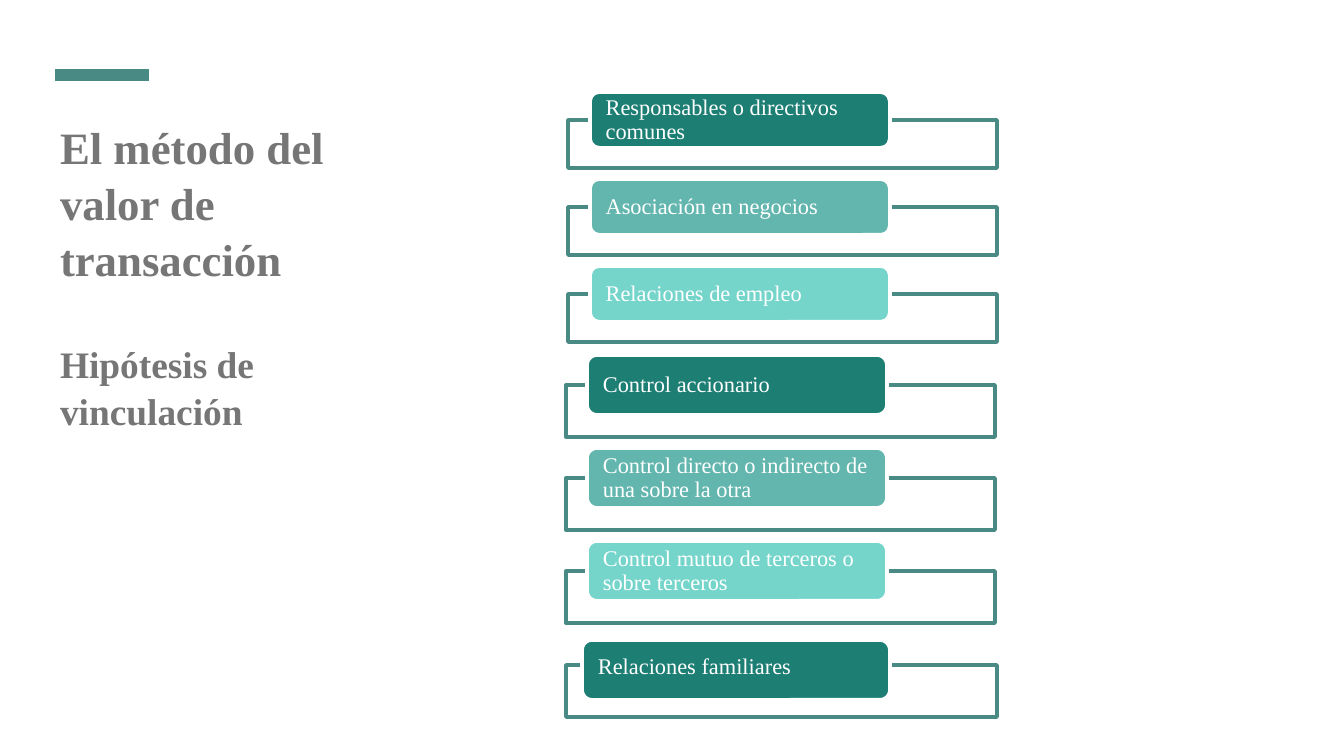
"""Build a slide listing the links between parties under the transaction value method."""
import pptx
import pptx.util
import pptx.dml.color
import pptx.enum.shapes
import pptx.enum.text
import pptx.oxml.ns
import lxml.etree

SCALE = 914400 / 134.4
FONT = "Times New Roman"
HUES = {"dark": "1D7E74", "mid": "62B6AE", "light": "75D5CB",
        "edge": "4A8A84", "grey": "777676", "white": "FFFFFF"}
TITLE = [("El método del valor de transacción", 24, 0),
         ("Hipótesis de vinculación", 20, 29)]
GROUPS = [
    {"frame": (568, 429, 48), "pill": (590, 300, 56), "top": 92,
     "step": 87, "drop": 28, "foot": 0,
     "items": [("Responsables o directivos comunes", "dark"),
               ("Asociación en negocios", "mid"),
               ("Relaciones de empleo", "light")]},
    {"frame": (566, 429, 52), "pill": (587, 300, 60), "top": 355,
     "step": 93, "drop": 30, "foot": 0,
     "items": [("Control accionario", "dark"),
               ("Control directo o indirecto de una sobre la otra", "mid"),
               ("Control mutuo de terceros o sobre terceros", "light")]},
    {"frame": (566, 431, 52), "pill": (582, 308, 60), "top": 640,
     "step": 0, "drop": 25, "foot": 5,
     "items": [("Relaciones familiares", "dark")]},
]
KIND = pptx.enum.shapes.MSO_SHAPE
ALIGN = pptx.enum.text.PP_ALIGN
ANCHOR = pptx.enum.text.MSO_ANCHOR


def px(num):
    return pptx.util.Emu(round(num * SCALE))


def rgb(name):
    return pptx.dml.color.RGBColor.from_string(HUES[name])


def style(para, size, hue, bold=False):
    para.alignment = ALIGN.LEFT
    font = para.font
    font.name, font.size, font.bold = FONT, pptx.util.Pt(size), bold
    font.color.rgb = rgb(hue)


def inset(frame, left, top, right, low):
    frame.word_wrap = True
    frame.margin_left, frame.margin_top = px(left), px(top)
    frame.margin_right, frame.margin_bottom = px(right), px(low)


def add_box(slide, kind, place, fill, line):
    box = slide.shapes.add_shape(kind, *map(px, place))
    box.shadow.inherit = False
    box.fill.solid()
    box.fill.fore_color.rgb = rgb(fill)
    box.line.color.rgb = rgb(line)
    box.line.width = pptx.util.Pt(2)
    return box


def add_title(slide):
    frame = slide.shapes.add_textbox(px(47), px(102), px(399), px(462)).text_frame
    inset(frame, 13, 16, 13, 13)
    for i, (text, size, gap) in enumerate(TITLE):
        para = frame.add_paragraph() if i else frame.paragraphs[0]
        para.text = text
        para.line_spacing = 1.04
        para.space_before = pptx.util.Pt(gap)
        style(para, size, "grey", True)


def add_bar(slide):
    bar = slide.shapes.add_connector(
        pptx.enum.shapes.MSO_CONNECTOR.STRAIGHT, px(55), px(75), px(149), px(75))
    bar.line.color.rgb = rgb("edge")
    bar.line.width = pptx.util.Pt(6)
    lxml.etree.SubElement(bar._element.spPr, pptx.oxml.ns.qn("a:effectLst"))


def add_group(slide, group):
    left, width, height = group["frame"]
    start, span, tall = group["pill"]
    for i, (text, hue) in enumerate(group["items"]):
        top = group["top"] + i * group["step"]
        add_box(slide, KIND.RECTANGLE,
                (left, top + group["drop"], width, height), "white", "edge")
        pill = add_box(slide, KIND.ROUNDED_RECTANGLE,
                       (start, top, span, tall), hue, "white")
        frame = pill.text_frame
        inset(frame, 13, 0, 13, group["foot"])
        frame.vertical_anchor = ANCHOR.MIDDLE
        para = frame.paragraphs[0]
        para.text = text
        para.line_spacing = 0.9
        style(para, 12, "white")


def main():
    deck = pptx.Presentation()
    deck.slide_width, deck.slide_height = px(1344), px(756)
    slide = deck.slides.add_slide(deck.slide_layouts[6])
    add_bar(slide)
    add_title(slide)
    for group in GROUPS:
        add_group(slide, group)
    deck.save("out.pptx")


if __name__ == "__main__":
    main()
